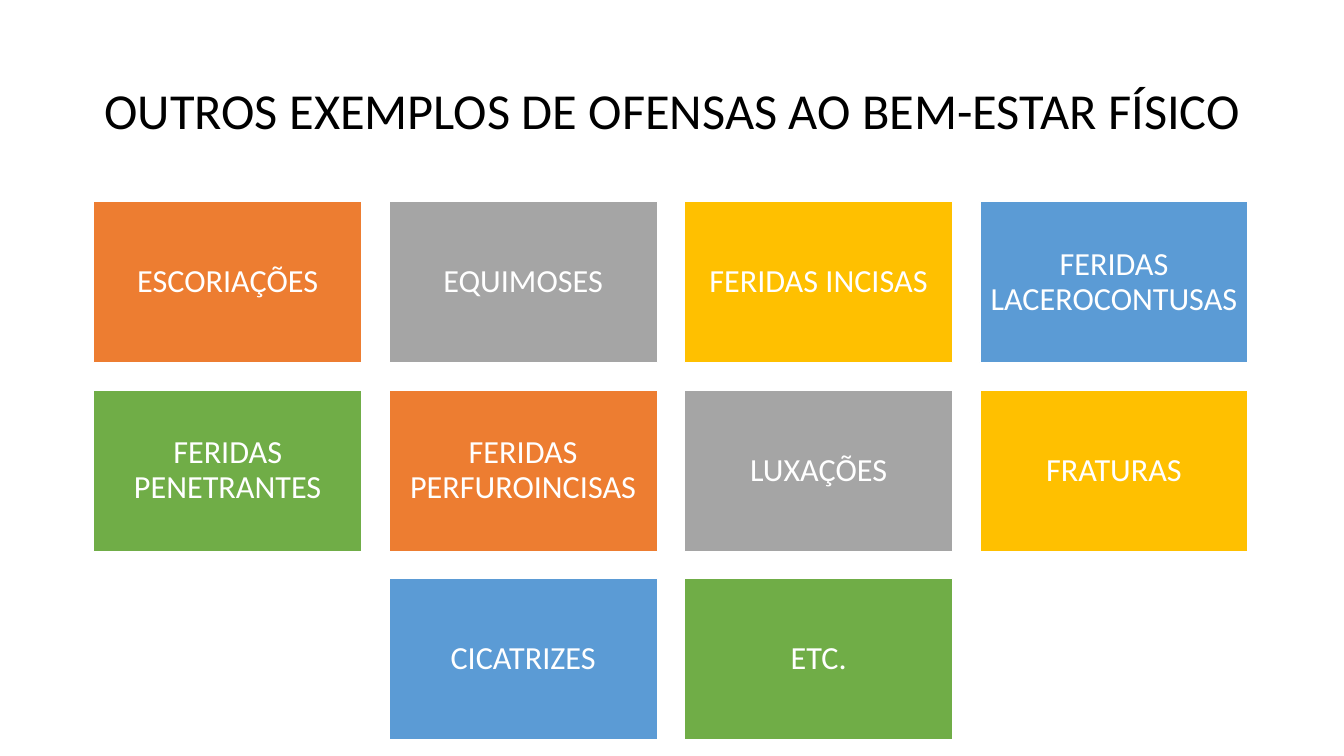
from dataclasses import dataclass
from itertools import cycle

import pptx
import pptx.dml.color
import pptx.enum.shapes
import pptx.enum.text
import pptx.util
from pptx.util import Inches


@dataclass(frozen=True)
class Theme:
    font: str = "Calibri"
    dark: str = "000000"
    light: str = "FFFFFF"
    fills: tuple = ("ED7D31", "A5A5A5", "FFC000", "5B9BD5", "70AD47")
    title: int = 36
    label: int = 23


THEME = Theme()
TITLE = "OUTROS EXEMPLOS DE OFENSAS AO BEM-ESTAR FÍSICO"
ROWS = [
    ["ESCORIAÇÕES", "EQUIMOSES", "FERIDAS INCISAS", "FERIDAS LACEROCONTUSAS"],
    ["FERIDAS PENETRANTES", "FERIDAS PERFUROINCISAS", "LUXAÇÕES", "FRATURAS"],
    ["CICATRIZES", "ETC."],
]
LEFT, TOP = 0.93, 2
WIDTH, HEIGHT = 2.66, 1.6
GAP = 0.27


def color(code):
    return pptx.dml.color.RGBColor.from_string(code)


def write(shape, text, size, ink, inset):
    """Put one centred paragraph in the middle of the shape."""
    frame = shape.text_frame
    frame.word_wrap = True
    frame.vertical_anchor = pptx.enum.text.MSO_ANCHOR.MIDDLE
    frame.margin_left = frame.margin_right = Inches(inset)
    para = frame.paragraphs[0]
    para.alignment = pptx.enum.text.PP_ALIGN.CENTER
    para.line_spacing = 0.9
    run = para.add_run()
    run.text = text
    run.font.name = THEME.font
    run.font.size = pptx.util.Pt(size)
    run.font.color.rgb = color(ink)


def add_title(slide):
    box = slide.shapes.add_textbox(
        Inches(0.92), Inches(0.4), Inches(11.5), Inches(1.45))
    write(box, TITLE, THEME.title, THEME.dark, 0.1)


def add_card(slide, left, top, text, fill):
    card = slide.shapes.add_shape(
        pptx.enum.shapes.MSO_SHAPE.RECTANGLE,
        Inches(left), Inches(top), Inches(WIDTH), Inches(HEIGHT))
    card.shadow.inherit = False
    card.fill.solid()
    card.fill.fore_color.rgb = color(fill)
    card.line.color.rgb = color(THEME.light)
    card.line.width = pptx.util.Pt(1)
    write(card, text, THEME.label, THEME.light, 0.09)


def add_grid(slide):
    """Lay out the cards row by row, centring a short row."""
    fills = cycle(THEME.fills)
    most = max(len(row) for row in ROWS)
    for line, row in enumerate(ROWS):
        shift = (most - len(row)) / 2
        for col, text in enumerate(row):
            left = LEFT + (col + shift) * (WIDTH + GAP)
            top = TOP + line * (HEIGHT + GAP)
            add_card(slide, left, top, text, next(fills))


def main():
    deck = pptx.Presentation()
    deck.slide_width = Inches(13.33)
    deck.slide_height = Inches(7.5)
    slide = deck.slides.add_slide(deck.slide_layouts[6])
    add_title(slide)
    add_grid(slide)
    deck.save("out.pptx")


if __name__ == "__main__":
    main()
